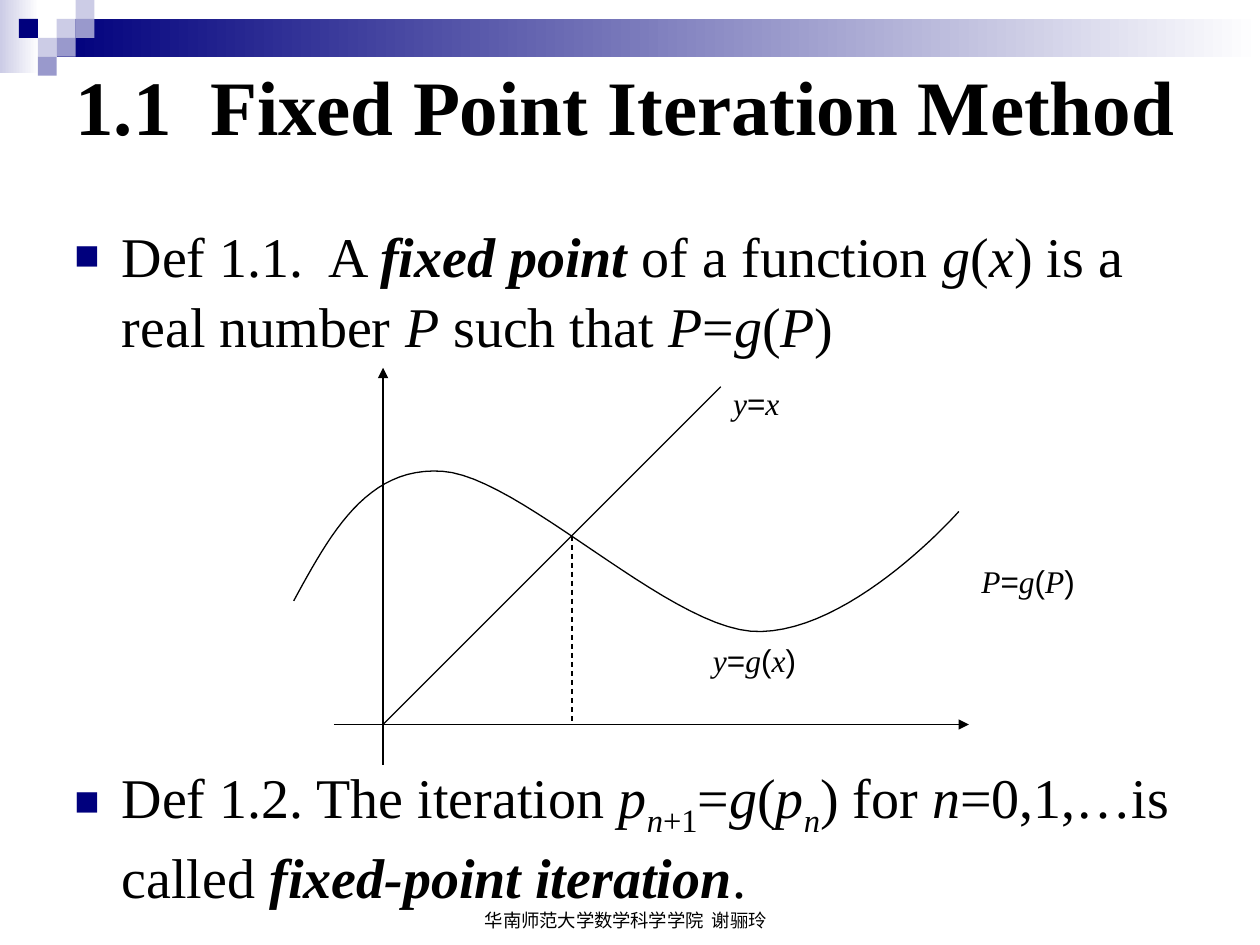
import pptx
import pptx.dml.color
import pptx.enum.dml
import pptx.enum.shapes
import pptx.enum.text
import pptx.oxml
import pptx.oxml.ns
import pptx.util
from lxml import etree

Pt = pptx.util.Pt
COLORS = {"navy": "00007D", "mid": "9999CC", "pale": "CCCCE6",
          "white": "FFFFFF", "black": "000000"}
SERIF, SANS = "Times New Roman", "Arial"


def rgb(name):
    return pptx.dml.color.RGBColor.from_string(COLORS[name])


def add_text(left, top, width, height, spans, size, font, upright=None, bullet=False):
    """Spans are (text, style); style letters: b bold, i italic, s subscript."""
    box = page.shapes.add_textbox(Pt(left), Pt(top), Pt(width), Pt(height))
    frame = box.text_frame
    frame.word_wrap = True
    para = frame.paragraphs[0]
    if bullet:
        para.line_spacing = 1.05
        props = para._p.get_or_add_pPr()
        props.set("marL", str(Pt(27)))
        props.set("indent", str(Pt(-27)))
        color = etree.SubElement(props, pptx.oxml.ns.qn("a:buClr"))
        etree.SubElement(color, pptx.oxml.ns.qn("a:srgbClr"), val=COLORS["navy"])
        etree.SubElement(props, pptx.oxml.ns.qn("a:buSzPct"), val="75000")
        etree.SubElement(props, pptx.oxml.ns.qn("a:buFont"), typeface=SANS)
        etree.SubElement(props, pptx.oxml.ns.qn("a:buChar"), char="■")
    para.font.size = Pt(size)
    para.font.color.rgb = rgb("black")
    if upright is None:
        para.font.name = font
    for text, style in spans:
        span = para.add_run()
        span.text = text
        if upright:
            span.font.name = font if "i" in style else upright
        if "b" in style:
            span.font.bold = True
        if "i" in style:
            span.font.italic = True
        if "s" in style:
            span._r.get_or_add_rPr().set("baseline", "-25000")
    return frame


deck = pptx.Presentation()
deck.slide_width, deck.slide_height = Pt(720), Pt(540)
page = deck.slides.add_slide(deck.slide_layouts[6])

# Banner: two gradient bars, then small squares
TILE = 10.8
banner = [(0, 0, 22.3, 41.8, "pale", True), (32.4, 10.8, 687.6, 21.6, "navy", True)]
squares = [(3, 1, "pale"), (4, 0, "pale"), (4, 1, "mid"), (2, 2, "pale"),
           (1, 1, "navy"), (3, 2, "mid"), (2, 3, "mid")]
banner += [(column * TILE, row * TILE, TILE, TILE, color, False)
           for column, row, color in squares]
for left, top, width, height, color, fades in banner:
    block = page.shapes.add_shape(pptx.enum.shapes.MSO_SHAPE.RECTANGLE,
                                  Pt(left), Pt(top), Pt(width), Pt(height))
    block.shadow.inherit = False
    block.line.fill.background()
    if fades:
        block.fill.gradient()
        block.fill.gradient_angle = 0
        for stop, name in zip(block.fill.gradient_stops, (color, "white")):
            stop.color.rgb = rgb(name)
    else:
        block.fill.solid()
        block.fill.fore_color.rgb = rgb(color)

# Title
title = add_text(36, 6, 648, 108, [("1.1  Fixed Point Iteration Method", "b")], 44, SERIF)
title.vertical_anchor = pptx.enum.text.MSO_ANCHOR.MIDDLE

# Definitions
fixed_point = [("Def 1.1.  A ", ""), ("fixed point ", "bi"), ("of a function ", ""),
               ("g", "i"), ("(", ""), ("x", "i"), (") is a real number ", ""),
               ("P", "i"), (" such that ", ""), ("P", "i"), ("=", ""), ("g", "i"),
               ("(", ""), ("P", "i"), (")", "")]
iteration = [("Def 1.2. The iteration ", ""), ("p", "i"), ("n", "is"), ("+1", "s"),
             ("=", ""), ("g", "i"), ("(", ""), ("p", "i"), ("n", "is"), (") for ", ""),
             ("n", "i"), ("=0,1,…is called ", ""), ("fixed-point iteration", "bi"),
             (".", "")]
for top, spans in ((121, fixed_point), (430, iteration)):
    add_text(35.5, top, 648, 86, spans, 32, SERIF, bullet=True)

# Axes, diagonal and dashed drop line
ORIGIN_X, ORIGIN_Y = 218.9, 414
CROSS = 108  # the fixed point lies this far along both axes
lines = [(190.8, ORIGIN_Y, 553.7, ORIGIN_Y, "arrow"),
         (ORIGIN_X, 437, ORIGIN_X, 210.2, "arrow"),
         (ORIGIN_X, ORIGIN_Y, ORIGIN_X + 193, ORIGIN_Y - 193, "plain"),
         (ORIGIN_X + CROSS, ORIGIN_Y - CROSS, ORIGIN_X + CROSS, ORIGIN_Y, "dash")]
for x1, y1, x2, y2, kind in lines:
    line = page.shapes.add_connector(pptx.enum.shapes.MSO_CONNECTOR.STRAIGHT,
                                     Pt(x1), Pt(y1), Pt(x2), Pt(y2))
    line.line.color.rgb = rgb("black")
    line.line.width = Pt(0.75)
    if kind == "dash":
        line.line.dash_style = pptx.enum.dml.MSO_LINE.DASH
    if kind == "arrow":
        etree.SubElement(line.line._get_or_add_ln(), pptx.oxml.ns.qn("a:tailEnd"),
                         type="triangle")
    etree.SubElement(line._element.spPr, pptx.oxml.ns.qn("a:effectLst"))

# Curve y = g(x): three Bezier pieces, sampled
STEPS = 24
knots = [(167.8, 343.4), (188.6, 305.3), (209.5, 266.4), (252.7, 269.3),
         (296.6, 272.2), (379.4, 356.4), (429.1, 360.7),
         (478.1, 364.3), (535, 306.7), (547.9, 292.3)]
points = []
for first in range(0, 9, 3):
    piece = knots[first:first + 4]
    for step in range(1, STEPS + 1):
        t = step / STEPS
        weights = ((1 - t) ** 3, 3 * t * (1 - t) ** 2, 3 * t * t * (1 - t), t ** 3)
        points.append(tuple(Pt(sum(w * knot[axis] for w, knot in zip(weights, piece)))
                            for axis in (0, 1)))
builder = page.shapes.build_freeform(Pt(knots[0][0]), Pt(knots[0][1]))
builder.add_line_segments(points, close=False)
curve = builder.convert_to_shape()
curve.shadow.inherit = False
curve.fill.background()
curve.line.color.rgb = rgb("black")
curve.line.width = Pt(0.75)

# Labels: letters in italic serif, signs in sans
for left, top, width, label in ((411.8, 216, 62, "y=x"), (400.3, 362.9, 85, "y=g(x)"),
                                (553.7, 317.5, 130, "P=g(P)")):
    spans = [(sign, "i" if sign.isalpha() else "") for sign in label]
    add_text(left, top, width, 28.8, spans, 18, SERIF, upright=SANS)

# Footer
add_text(270, 516.2, 186, 18, [("华南师范大学数学科学学院  谢骊玲", "")], 10.5, SANS)

deck.save("out.pptx")
